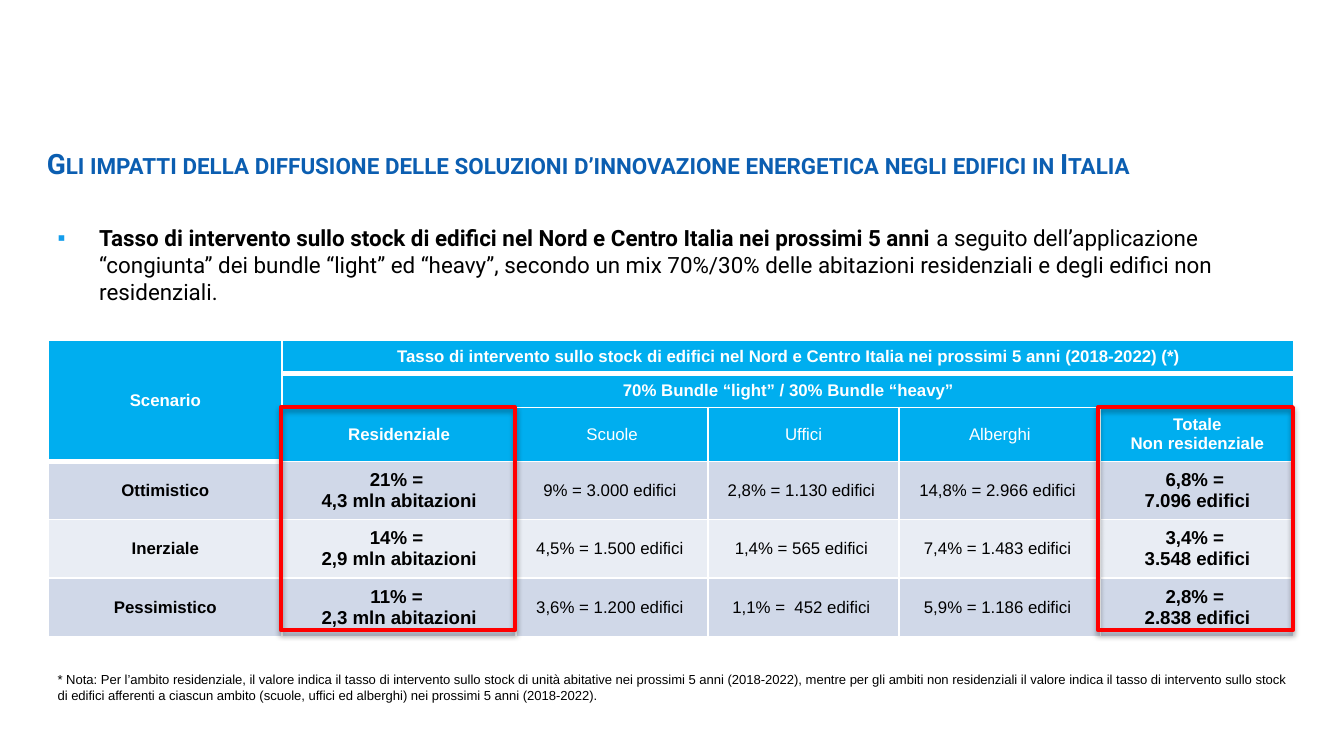
from dataclasses import dataclass

from lxml.etree import SubElement as Sub
from pptx import Presentation
from pptx.dml.color import RGBColor as RGB
from pptx.enum.shapes import MSO_SHAPE as Shape
from pptx.enum.text import MSO_ANCHOR as Anchor, MSO_AUTO_SIZE as Auto, PP_ALIGN as Align
from pptx.oxml.ns import qn
from pptx.util import Inches, Pt


@dataclass(frozen=True)
class Theme:
    title: str = "0B5EB1"
    bullet: str = "139DEC"
    head: str = "00AEEF"
    bands: tuple = ("D0D8E8", "E9EDF4")
    mark: str = "FF0000"
    black: str = "000000"
    white: str = "FFFFFF"
    main: str = "Roboto"
    grid: str = "Arial"
    title_size: int = 15
    body_size: int = 12
    key_size: int = 10
    cell_size: int = 9
    note_size: int = 7


def tint(node, color):
    return Sub(node, qn("a:srgbClr"), val=color)


class Deck:
    def __init__(self, theme, slide):
        self.theme = theme
        self.slide = slide

    def run(self, para, text, font, size, color, bold=False):
        run = para.add_run()
        run.text = text
        run.font.name = font
        run.font.size = Pt(size)
        run.font.bold = bold
        run.font.color.rgb = RGB.from_string(color)
        return run

    def box(self, x, y, w, h):
        """Add a wrapping text box and return its first paragraph."""
        area = self.slide.shapes.add_textbox(Inches(x), Inches(y), Inches(w), Inches(h))
        frame = area.text_frame
        frame.word_wrap = True
        frame.auto_size = Auto.SHAPE_TO_FIT_TEXT
        return frame.paragraphs[0]

    def title(self, text, *at):
        t = self.theme
        run = self.run(self.box(*at), text, t.main, t.title_size, t.title, True)
        run.font._element.set("cap", "small")

    def bullet(self, lead, rest, *at):
        t = self.theme
        para = self.box(*at)
        props = para._p.get_or_add_pPr()
        props.set("lvl", "1")
        props.set("marL", str(Inches(0.31)))
        props.set("indent", str(-Inches(0.31)))
        tint(Sub(props, qn("a:buClr")), t.bullet)
        Sub(props, qn("a:buFont"), typeface=t.grid)
        Sub(props, qn("a:buChar"), char="▪")
        self.run(para, lead, t.main, t.body_size, t.black, True)
        self.run(para, rest, t.main, t.body_size, t.black)

    def note(self, text, *at):
        t = self.theme
        self.run(self.box(*at), text, t.grid, t.note_size, t.black)

    def edges(self, cell, base=1):
        props = cell._tc.get_or_add_tcPr()
        for pos, side in enumerate(("L", "R", "T", "B")):
            width = base if side == "B" else 1
            line = props.makeelement(qn(f"a:ln{side}"), {"w": str(Pt(width))})
            tint(Sub(line, qn("a:solidFill")), self.theme.white)
            props.insert(pos, line)

    def cell(self, cell, paras, fill, color, size, bold, base=1):
        """Fill one cell; a line feed in a paragraph becomes a line break."""
        cell.fill.solid()
        cell.fill.fore_color.rgb = RGB.from_string(fill)
        cell.vertical_anchor = Anchor.MIDDLE
        self.edges(cell, base)
        frame = cell.text_frame
        for n, text in enumerate(paras):
            para = frame.add_paragraph() if n else frame.paragraphs[0]
            para.alignment = Align.CENTER
            for i, line in enumerate(text.split("\n")):
                if i:
                    para.add_line_break()
                self.run(para, line, self.theme.grid, size, color, bold)

    def table(self, x, y, cols, rows, head, body):
        """Head maps (row, column) to paragraphs; body is a list of rows."""
        t = self.theme
        grid = self.slide.shapes.add_table(
            len(rows), len(cols), Inches(x), Inches(y),
            Inches(sum(cols)), Inches(sum(rows))).table
        for col, width in zip(grid.columns, cols):
            col.width = Inches(width)
        for row, height in zip(grid.rows, rows):
            row.height = Inches(height)
        last = len(cols) - 1
        keys = (0, 1, last)
        top = len(rows) - len(body)
        for r in range(top):
            for c in range(len(cols)):
                bold = r < 2 or c in keys
                base = 3 if c == 0 or r == 0 else 1
                self.cell(grid.cell(r, c), head.get((r, c), ()), t.head,
                          t.white, t.cell_size, bold, base)
        for r, line in enumerate(body):
            for c, text in enumerate(line):
                size = t.key_size if c in (1, last) else t.cell_size
                self.cell(grid.cell(r + top, c), [text], t.bands[r % 2],
                          t.black, size, c in keys)
        grid.cell(0, 0).merge(grid.cell(top - 1, 0))
        for r in range(top - 1):
            grid.cell(r, 1).merge(grid.cell(r, last))

    def frame(self, x, y, w, h):
        """Outline a table column with a soft shadow below."""
        rect = self.slide.shapes.add_shape(
            Shape.RECTANGLE, Inches(x), Inches(y), Inches(w), Inches(h))
        rect.fill.background()
        rect.line.color.rgb = RGB.from_string(self.theme.mark)
        rect.line.width = Pt(2.25)
        rect.shadow.inherit = False
        effects = rect._element.spPr.find(qn("a:effectLst"))
        shade = Sub(effects, qn("a:outerShdw"), blurRad=str(Pt(3.1)),
                    dist=str(Pt(1.8)), dir="5400000", rotWithShape="0")
        Sub(tint(shade, self.theme.black), qn("a:alpha"), val="35000")


HEAD = {
    (0, 0): ["Scenario"],
    (0, 1): ["Tasso di intervento sullo stock di edifici nel Nord e Centro Italia "
             "nei prossimi 5 anni (2018-2022) (*)"],
    (1, 1): ["70% Bundle “light” / 30% Bundle “heavy”"],
    (2, 1): ["Residenziale"],
    (2, 2): ["Scuole"],
    (2, 3): ["Uffici"],
    (2, 4): ["Alberghi"],
    (2, 5): ["Totale", "Non residenziale"],
}
BODY = [
    ["Ottimistico", "21% = \n4,3 mln abitazioni", "9% = 3.000 edifici ",
     "2,8% = 1.130 edifici ", "14,8% = 2.966 edifici ", "6,8% = \n7.096 edifici"],
    ["Inerziale", "14% = \n2,9 mln abitazioni", "4,5% = 1.500 edifici ",
     "1,4% = 565 edifici ", "7,4% = 1.483 edifici ", "3,4% = \n3.548 edifici"],
    ["Pessimistico", "11% = \n2,3 mln abitazioni", "3,6% = 1.200 edifici ",
     "1,1% =  452 edifici ", "5,9% = 1.186 edifici ", "2,8% = \n2.838 edifici"],
]


def main():
    prs = Presentation()
    prs.slide_width = Inches(10)
    prs.slide_height = prs.slide_width * 9 // 16
    deck = Deck(Theme(), prs.slides.add_slide(prs.slide_layouts[6]))
    deck.title("Gli impatti della diffusione delle soluzioni d’innovazione energetica "
               "negli edifici in Italia", 0.25, 1.04, 9.75, 0.35)
    deck.bullet("Tasso di intervento sullo stock di edifici nel Nord e Centro Italia "
                "nei prossimi 5 anni",
                " a seguito dell’applicazione “congiunta” dei bundle “light” ed “heavy”, "
                "secondo un mix 70%/30% delle abitazioni residenziali e degli edifici "
                "non residenziali.", 0.33, 1.62, 9.41, 0.91)
    deck.note("* Nota: Per l’ambito residenziale, il valore indica il tasso di intervento "
              "sullo stock di unità abitative nei prossimi 5 anni (2018-2022), mentre per "
              "gli ambiti non residenziali il valore indica il tasso di intervento sullo "
              "stock di edifici afferenti a ciascun ambito (scuole, uffici ed alberghi) "
              "nei prossimi 5 anni (2018-2022).", 0.33, 4.95, 9.41, 0.57)
    deck.table(0.36, 2.53, [1.74, 1.74, 1.43, 1.42, 1.5, 1.44],
               [0.25, 0.25, 0.4] + [1.3 / 3] * 3, HEAD, BODY)
    for x, w in ((2.09, 1.74), (8.17, 1.45)):
        deck.frame(x, 3.03, w, 1.66)
    prs.save("out.pptx")


if __name__ == "__main__":
    main()
